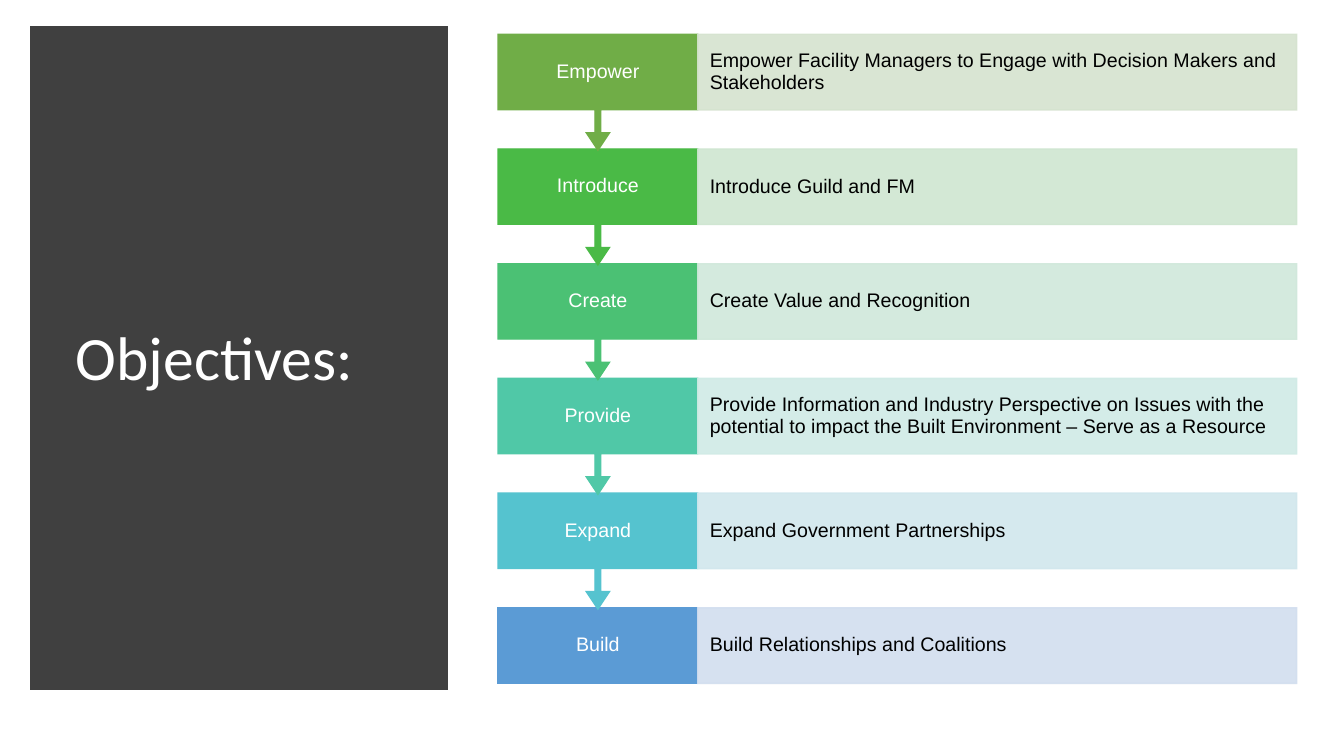
"""Build the Objectives slide: a dark title panel beside a six-step chain."""
from lxml import etree
from pptx import Presentation
from pptx.dml.color import RGBColor as RGB
from pptx.enum.shapes import MSO_SHAPE as Shape
from pptx.enum.text import MSO_ANCHOR as Anchor, MSO_AUTO_SIZE as Fit, PP_ALIGN as Align
from pptx.oxml.ns import qn
from pptx.util import Inches, Pt

TITLE = "Objectives:"
STEPS = [
    ("Empower", "Empower Facility Managers to Engage with Decision Makers and Stakeholders",
     "70AD47", "D5E3CF"),
    ("Introduce", "Introduce Guild and FM", "4ABA46", "CFE6D1"),
    ("Create", "Create Value and Recognition", "4BC174", "D0E8DB"),
    ("Provide", "Provide Information and Industry Perspective on Issues with the potential "
     "to impact the Built Environment – Serve as a Resource", "50C8A7", "D0EBE6"),
    ("Expand", "Expand Government Partnerships", "55C3CF", "D1E7ED"),
    ("Build", "Build Relationships and Coalitions", "5B9BD5", "D2DEEF"),
]
THEME = {
    "panel": "404040", "light": "FFFFFF", "dark": "000000", "alpha": 90,
    "title_font": "Calibri", "title_size": 44, "body_font": "Arial", "body_size": 14,
}
WIDTH, HEIGHT = 13.33, 7.5
PANEL = (0.37, 0.33, 4, 6.45)
TITLE_BOX = (0.65, 0.7, 3.46, 5.75)
LEFT, TOP, LAST_TOP = 4.94, 0.34, 6.03
LABEL_W, DETAIL_W = 1.98, 5.94
ROW_H, CALLOUT_H = 0.75, 1.15
PITCH = (LAST_TOP - TOP) / (len(STEPS) - 1)
ARROW = (0.05, 0.1, 0.15, 0.65)
LABEL_INSETS, DETAIL_INSETS = (0.14, 0.11), (0.12, 0.19)


def apply(obj, formats):
    for name, value in formats.items():
        setattr(obj, name, value)


def write(sp, text, color, font, size, align, insets, after=0):
    tf = sp.text_frame
    tf.text = text
    x, y = map(Inches, insets)
    apply(tf, {"word_wrap": True, "auto_size": Fit.NONE, "vertical_anchor": Anchor.MIDDLE,
               "margin_left": x, "margin_right": x, "margin_top": y, "margin_bottom": y})
    p = tf.paragraphs[0]
    apply(p, {"alignment": align, "line_spacing": 0.9,
              "space_before": Pt(0), "space_after": Pt(after)})
    r = p.runs[0]
    apply(r.font, {"name": font, "size": Pt(size)})
    r.font.color.rgb = RGB.from_string(color)


def add_block(s, kind, box, color, line_width=1, alpha=100):
    sp = s.shapes.add_shape(kind, *map(Inches, box))
    sp.shadow.inherit = False
    sp.line.width = Pt(line_width)
    for fill in (sp.fill, sp.line.fill):
        fill.solid()
        fill.fore_color.rgb = RGB.from_string(color)
    spPr = sp._element.spPr
    etree.SubElement(spPr.find(qn("a:ln")), qn("a:miter")).set("lim", "800000")
    if alpha < 100:
        for clr in spPr.iter(qn("a:srgbClr")):
            etree.SubElement(clr, qn("a:alpha")).set("val", str(alpha * 1000))
    return sp


def add_step(s, row, step):
    label, detail, strong, pale = step
    top = TOP + row * PITCH
    last = row == len(STEPS) - 1
    kind = Shape.RECTANGLE if last else Shape.DOWN_ARROW_CALLOUT
    height = ROW_H if last else CALLOUT_H
    body = {"font": THEME["body_font"], "size": THEME["body_size"], "after": 5}

    sp = add_block(s, kind, (LEFT, top, LABEL_W, height), strong)
    if not last:
        for i, value in enumerate(ARROW):
            sp.adjustments[i] = value
    write(sp, label, THEME["light"], align=Align.CENTER, insets=LABEL_INSETS, **body)

    sp = add_block(s, Shape.RECTANGLE, (LEFT + LABEL_W, top, DETAIL_W, ROW_H), pale,
                   alpha=THEME["alpha"])
    write(sp, detail, THEME["dark"], align=Align.LEFT, insets=DETAIL_INSETS, **body)


def main():
    prs = Presentation()
    apply(prs, {"slide_width": Inches(WIDTH), "slide_height": Inches(HEIGHT)})
    s = prs.slides.add_slide(prs.slide_layouts[5])

    panel = add_block(s, Shape.RECTANGLE, PANEL, THEME["panel"], line_width=10)
    title = s.shapes.title
    panel._element.addnext(title._element)
    apply(title, dict(zip(("left", "top", "width", "height"), map(Inches, TITLE_BOX))))
    write(title, TITLE, THEME["light"], THEME["title_font"], THEME["title_size"],
          Align.LEFT, (0.1, 0.05))

    for row, step in reversed(list(enumerate(STEPS))):
        add_step(s, row, step)
    prs.save("out.pptx")


if __name__ == "__main__":
    main()
